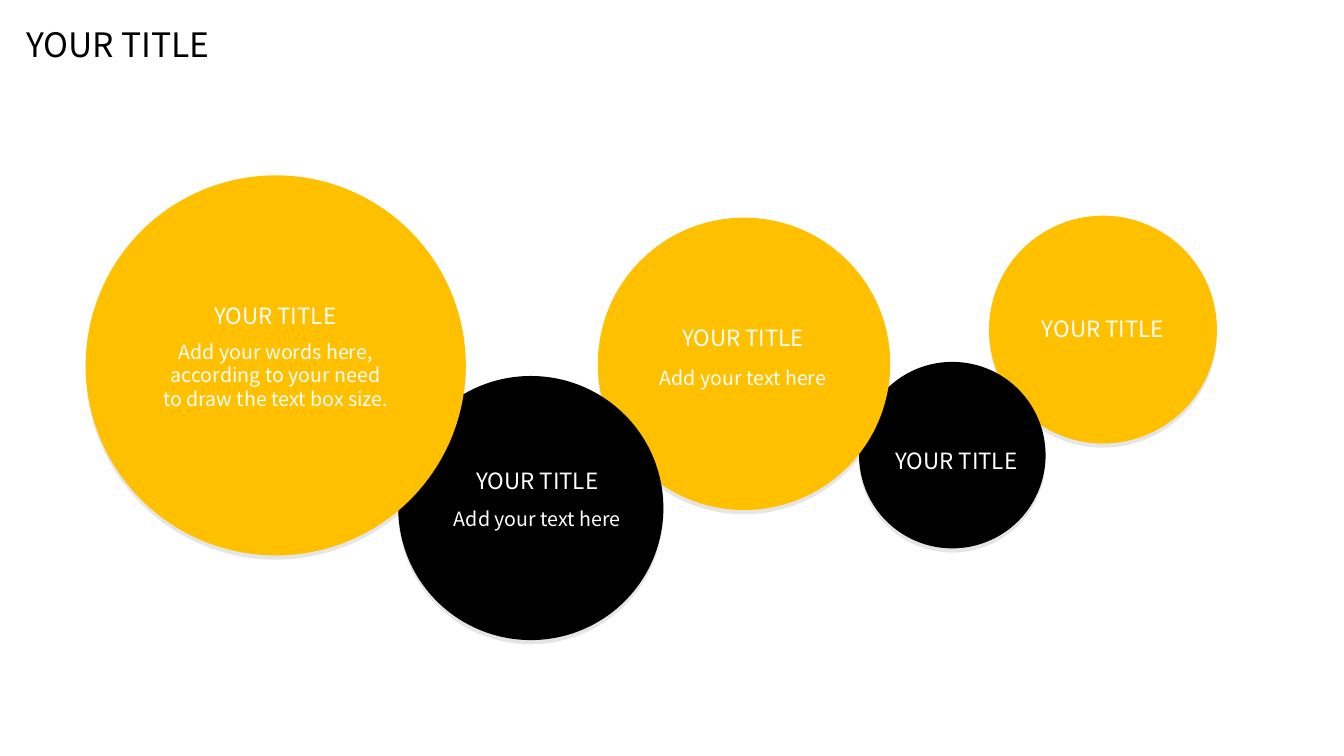
from lxml import etree
from pptx import Presentation
from pptx.dml.color import RGBColor
from pptx.enum.shapes import MSO_SHAPE
from pptx.enum.text import MSO_ANCHOR, MSO_AUTO_SIZE, PP_ALIGN
from pptx.oxml.ns import qn
from pptx.util import Inches, Pt

OVAL = MSO_SHAPE.OVAL
LEFT, CENTER = PP_ALIGN.LEFT, PP_ALIGN.CENTER
TOP = MSO_ANCHOR.TOP
GROW = MSO_AUTO_SIZE.SHAPE_TO_FIT_TEXT

GOLD, BLACK, WHITE = "FFC000", "000000", "FFFFFF"
HEAD = "YOUR TITLE"
NOTE = "Add your text here"
WORDS = "Add your words here,\naccording to your need\nto draw the text box size."


def color(code):
    return RGBColor.from_string(code)


class Deck:
    font = "Noto Sans CJK JP"

    def __init__(self):
        self.file = Presentation()
        self.file.slide_width = Inches(13.33)
        self.file.slide_height = Inches(7.5)
        self.slide = self.file.slides.add_slide(self.file.slide_layouts[5])

    def place(self, shape, box):
        shape.left, shape.top, shape.width, shape.height = map(Inches, box)

    def style(self, shape, text, size, tint, align, line=1.0, before=0):
        frame = shape.text_frame
        frame.text = text
        frame.word_wrap = True
        frame.auto_size = GROW
        frame.vertical_anchor = TOP
        for para in frame.paragraphs:
            para.alignment = align
            para.line_spacing = line
            para.space_before = Pt(before)
            for run in para.runs:
                run.font.name = self.font
                run.font.size = Pt(size)
                run.font.color.rgb = color(tint)

    def title(self, text, box):
        shape = self.slide.shapes.title
        self.place(shape, box)
        self.style(shape, text, 24, BLACK, LEFT)

    def circle(self, box, fill):
        shape = self.slide.shapes.add_shape(OVAL, *map(Inches, box))
        shape.fill.solid()
        shape.fill.fore_color.rgb = color(fill)
        shape.line.fill.background()
        shape.shadow.inherit = False
        self.shade(shape)

    def shade(self, shape):
        effects = shape.element.spPr.find(qn("a:effectLst"))
        shadow = etree.SubElement(effects, qn("a:outerShdw"), blurRad="0",
                                  dist=str(Pt(3)), dir="5400000",
                                  algn="t", rotWithShape="0")
        tint = etree.SubElement(shadow, qn("a:srgbClr"), val=BLACK)
        etree.SubElement(tint, qn("a:alpha"), val="10000")

    def label(self, text, box, size, line=1.0, before=0):
        shape = self.slide.shapes.add_textbox(*map(Inches, box))
        self.style(shape, text, size, WHITE, CENTER, line, before)

    def head(self, box):
        self.label(HEAD, box, 16, line=0.9)

    def note(self, box):
        self.label(NOTE, box, 14, line=1.2, before=2.8)


def main():
    deck = Deck()
    deck.title(HEAD, (0.16, 0.19, 2.64, 0.5))

    circles = [
        ((9.81, 2.14, 2.26, 2.26), GOLD),
        ((8.52, 3.59, 1.85, 1.85), BLACK),
        ((5.93, 2.16, 2.9, 2.9), GOLD),
        ((3.95, 3.73, 2.63, 2.62), BLACK),
        ((0.85, 1.74, 3.77, 3.77), GOLD),
    ]
    for box, fill in circles:
        deck.circle(box, fill)

    heads = [
        (10.1, 3.11, 1.68),
        (8.63, 4.42, 1.71),
        (6.18, 3.2, 2.38),
        (4.2, 4.62, 2.26),
        (1.17, 2.98, 3.12),
    ]
    for left, top, width in heads:
        deck.head((left, top, width, 0.34))

    for left, top, width in [(6.18, 3.53, 2.38), (4.2, 4.93, 2.26)]:
        deck.note((left, top, width, 0.38))
    deck.label(WORDS, (1.29, 3.32, 2.89, 0.81), 14)

    deck.file.save("out.pptx")


if __name__ == "__main__":
    main()
